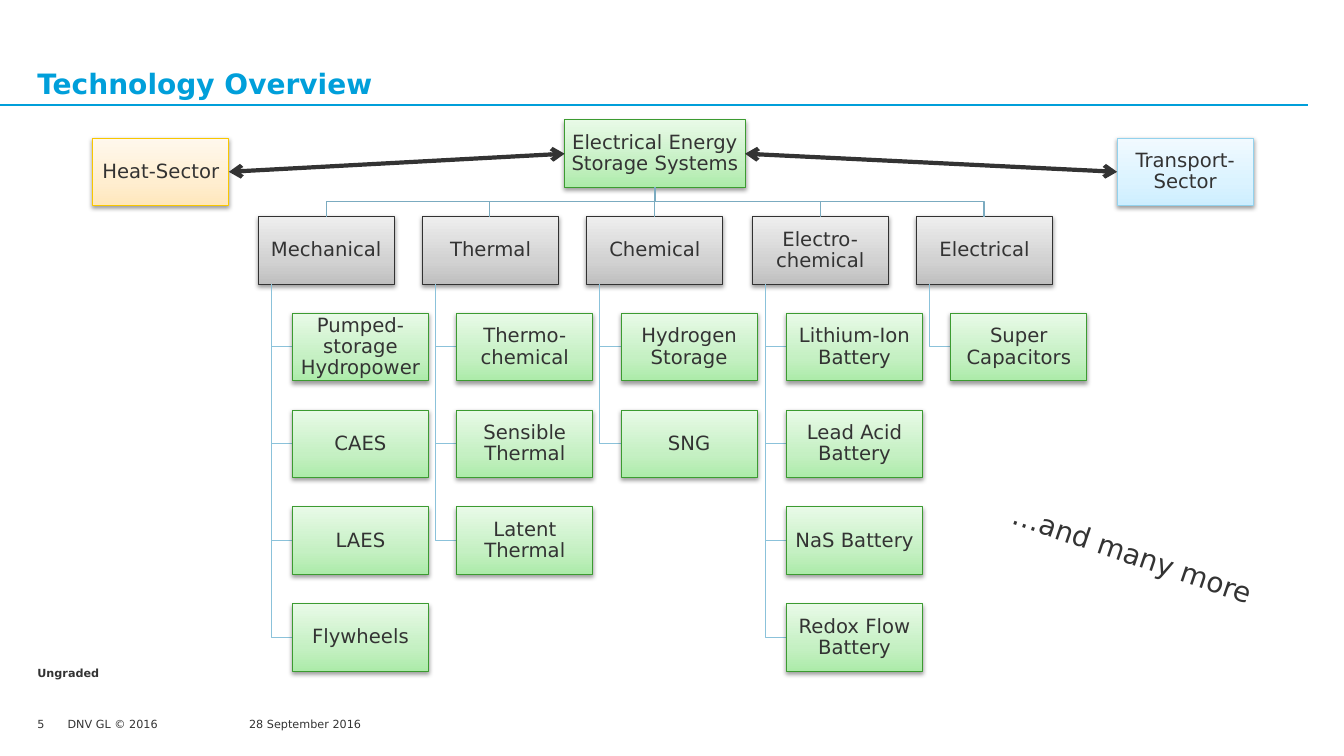
from lxml import etree
from pptx import Presentation
from pptx.dml.color import RGBColor
from pptx.enum.shapes import MSO_CONNECTOR, MSO_SHAPE
from pptx.enum.text import MSO_ANCHOR, PP_ALIGN
from pptx.oxml import parse_xml
from pptx.oxml.ns import nsdecls, qn
from pptx.util import Pt

PX = 9144  # 100 px to the inch
RECTANGLE = MSO_SHAPE.RECTANGLE
STRAIGHT = MSO_CONNECTOR.STRAIGHT
TOP, MIDDLE, BOTTOM = MSO_ANCHOR.TOP, MSO_ANCHOR.MIDDLE, MSO_ANCHOR.BOTTOM
LEFT, CENTER = PP_ALIGN.LEFT, PP_ALIGN.CENTER
SIDE_TOP, SIDE_LEFT, SIDE_BOTTOM, SIDE_RIGHT = range(4)

FONT = "DejaVu Sans"
INK, ACCENT = "333333", "009FDA"
BRANCH_LINE, LEAF_LINE = "7BABC0", "8BC2DA"

# Outline colour, then gradient from the bottom up
GREEN = ("3C9B31", "ACEBA9", "C5F0C3", "E8FAE7")
GREY = ("323232", "BFBFBF", "D2D2D2", "EEEEEE")
BLUE = ("93D2ED", "CDEEFF", "DBF3FF", "F1FAFF")
YELLOW = ("F8C700", "FFE7BC", "FFEED0", "FFF8ED")

TECHNOLOGIES = {
    "Mechanical": ["Pumped-storage Hydropower", "CAES", "LAES", "Flywheels"],
    "Thermal": ["Thermo-chemical", "Sensible Thermal", "Latent Thermal"],
    "Chemical": ["Hydrogen Storage", "SNG"],
    "Electro-chemical": ["Lithium-Ion Battery", "Lead Acid Battery",
                         "NaS Battery", "Redox Flow Battery"],
    "Electrical": ["Super Capacitors"],
}

BOX_WIDTH, BOX_HEIGHT = 135, 67
ROOT_LEFT, ROOT_TOP, ROOT_WIDTH = 560, 119, 179
ROOT_CENTER, ROOT_BOTTOM = ROOT_LEFT + ROOT_WIDTH / 2, ROOT_TOP + BOX_HEIGHT
BRANCH_LEFT, BRANCH_TOP, BRANCH_STEP = 256, 215, 163.25
LEAF_TOP, LEAF_STEP, LEAF_INDENT, TRUNK_INDENT = 311, 96, 34, 13
SECTOR_TOP = 137


def color(value):
    return RGBColor.from_string(value)


class Page:
    def __init__(self, slide):
        self.shapes = slide.shapes

    def set_text(self, shape, text, size, ink=INK, bold=False, align=LEFT,
                 anchor=TOP, inset=0, spacing=None, wrap=True):
        frame = shape.text_frame
        frame.word_wrap = wrap
        frame.vertical_anchor = anchor
        frame.margin_left = frame.margin_right = inset * PX
        frame.margin_top = frame.margin_bottom = inset * PX
        para = frame.paragraphs[0]
        para.alignment = align
        para.line_spacing = spacing
        for number, line in enumerate(text.split("\n")):
            if number:
                para.add_line_break()
            span = para.add_run()
            span.text = line
            span.font.name = FONT
            span.font.size = Pt(size)
            span.font.bold = bold
            span.font.color.rgb = color(ink)

    def text(self, left, top, width, height, text, size, rotation=0, **style):
        box = self.shapes.add_textbox(left * PX, top * PX, width * PX, height * PX)
        box.rotation = rotation
        self.set_text(box, text, size, **style)

    def box(self, left, top, text, palette, width=BOX_WIDTH):
        box = self.shapes.add_shape(RECTANGLE, left * PX, top * PX,
                                    width * PX, BOX_HEIGHT * PX)
        outline, *shades = palette
        stops = "".join(
            f'<a:gs pos="{place}"><a:srgbClr val="{shade}"/></a:gs>'
            for place, shade in zip((0, 35000, 100000), shades))
        properties = box._element.spPr
        properties.insert(2, parse_xml(
            f'<a:gradFill {nsdecls("a")} rotWithShape="1"><a:gsLst>{stops}</a:gsLst>'
            '<a:lin ang="16200000" scaled="0"/></a:gradFill>'))
        box.line.color.rgb = color(outline)
        box.line.width = Pt(0.75)
        box.shadow.inherit = False
        properties.find(qn("a:effectLst")).append(parse_xml(
            f'<a:outerShdw {nsdecls("a")} blurRad="40000" dist="20000" dir="5400000" '
            'rotWithShape="0"><a:srgbClr val="000000"><a:alpha val="38000"/>'
            '</a:srgbClr></a:outerShdw>'))
        self.set_text(box, text, 14, align=CENTER, anchor=MIDDLE, inset=1, spacing=0.9)
        return box

    def elbow(self, points, ink):
        builder = self.shapes.build_freeform(*points[0], scale=PX)
        builder.add_line_segments(points[1:], close=False)
        bend = builder.convert_to_shape()
        bend.fill.background()
        bend.line.color.rgb = color(ink)
        bend.line.width = Pt(0.75)
        bend.shadow.inherit = False

    def line(self, start, end, ink, weight):
        line = self.shapes.add_connector(
            STRAIGHT, *(length * PX for length in (*start, *end)))
        line.line.color.rgb = color(ink)
        line.line.width = Pt(weight)
        etree.SubElement(line._element.spPr, qn("a:effectLst"))
        return line

    def join(self, first, first_side, second, second_side, ink, weight, arrows=False):
        line = self.line((0, 0), (0, 0), ink, weight)
        line.begin_connect(first, first_side)
        line.end_connect(second, second_side)
        if arrows:
            stroke = line._element.spPr.find(qn("a:ln"))
            for tip in ("a:headEnd", "a:tailEnd"):
                etree.SubElement(stroke, qn(tip), type="arrow")


def main():
    deck = Presentation()
    deck.slide_width, deck.slide_height = 1333 * PX, 750 * PX
    page = Page(deck.slides.add_slide(deck.slide_layouts[6]))

    # Title and footer
    page.line((0, 104), (1297, 104), ACCENT, 1.25)
    page.text(37, 26, 1260, 73, "Technology Overview", 20,
              ink=ACCENT, bold=True, anchor=BOTTOM)
    page.text(37, 659, 311, 18, "Ungraded", 8, bold=True, spacing=1.13)
    page.text(37, 712, 30, 20, "5", 8)
    page.text(67, 712, 92, 13, "DNV GL © 2016", 8, wrap=False)
    page.text(247, 712, 409, 20, "28 September 2016", 8)

    # Root of the tree
    root = page.box(ROOT_LEFT, ROOT_TOP, "Electrical Energy\nStorage Systems",
                    GREEN, ROOT_WIDTH)

    # Branches with their leaves
    fork = (ROOT_BOTTOM + BRANCH_TOP) / 2
    for column, (branch, leaves) in enumerate(TECHNOLOGIES.items()):
        left = round(BRANCH_LEFT + column * BRANCH_STEP)
        center = left + BOX_WIDTH / 2
        branch_box = page.box(left, BRANCH_TOP, branch, GREY)
        if center == ROOT_CENTER:
            page.join(root, SIDE_BOTTOM, branch_box, SIDE_TOP, BRANCH_LINE, 0.75)
        else:
            page.elbow([(ROOT_CENTER, ROOT_BOTTOM), (ROOT_CENTER, fork),
                        (center, fork), (center, BRANCH_TOP)], BRANCH_LINE)
        trunk, leaf_left = left + TRUNK_INDENT, left + LEAF_INDENT
        for row, leaf in enumerate(leaves):
            top = LEAF_TOP + row * LEAF_STEP
            middle = top + BOX_HEIGHT / 2
            page.elbow([(trunk, BRANCH_TOP + BOX_HEIGHT), (trunk, middle),
                        (leaf_left, middle)], LEAF_LINE)
            page.box(leaf_left, top, leaf, GREEN)

    # Neighbouring sectors
    heat = page.box(92, SECTOR_TOP, "Heat-Sector", YELLOW)
    transport = page.box(1108, SECTOR_TOP, "Transport-Sector", BLUE)
    page.join(heat, SIDE_RIGHT, root, SIDE_LEFT, INK, 3, arrows=True)
    page.join(root, SIDE_RIGHT, transport, SIDE_LEFT, INK, 3, arrows=True)

    # Tilted remark
    page.text(1000, 530, 260, 34, "…and many more", 20, rotation=18.8, spacing=1.13)

    deck.save("out.pptx")


if __name__ == "__main__":
    main()
